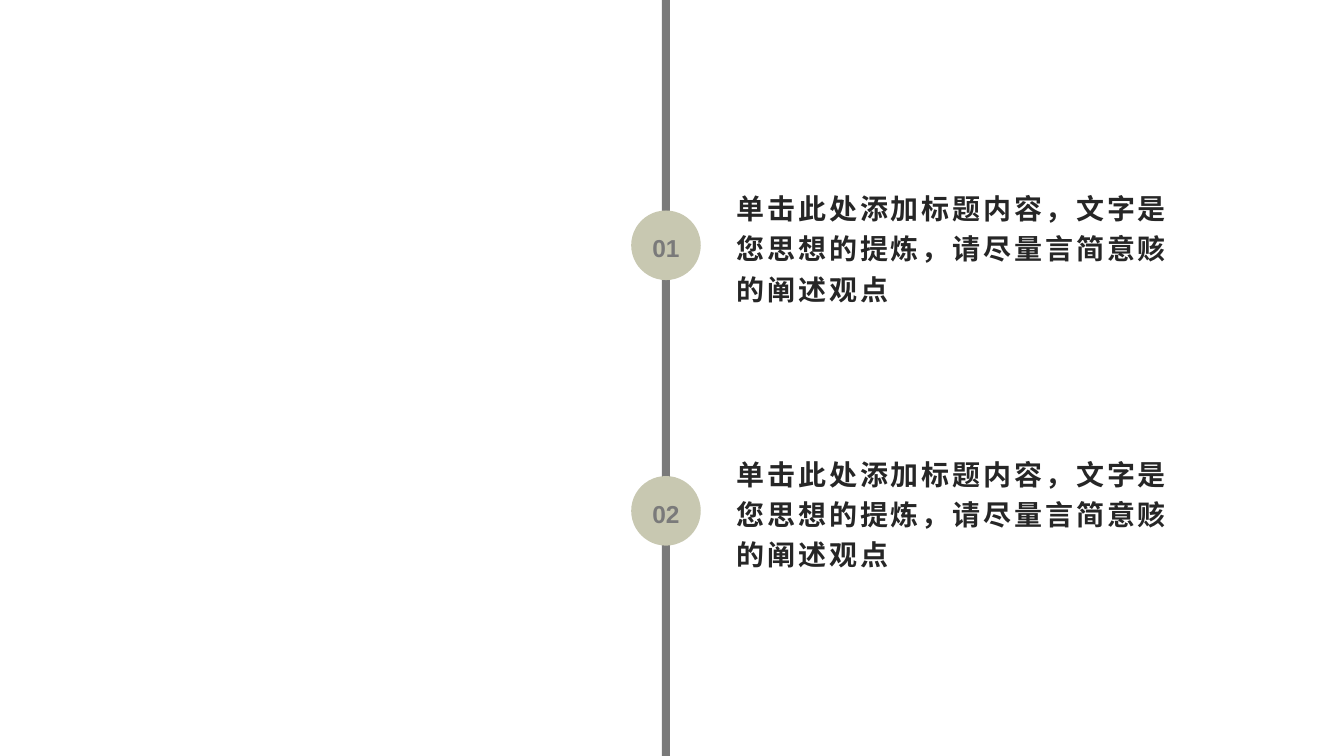
from pptx import Presentation
from pptx.dml.color import RGBColor
from pptx.enum.shapes import MSO_SHAPE
from pptx.enum.text import MSO_ANCHOR, PP_ALIGN
from pptx.util import Pt

RECT, OVAL = MSO_SHAPE.RECTANGLE, MSO_SHAPE.OVAL
MIDDLE = MSO_ANCHOR.MIDDLE
LEFT, CENTER = PP_ALIGN.LEFT, PP_ALIGN.CENTER

GRAY = RGBColor(0x7A, 0x7A, 0x7A)
SAGE = RGBColor(0xC8, 0xC8, 0xB1)
INK = RGBColor(0x26, 0x26, 0x26)

SLIDE_W, SLIDE_H = 960, 540
AXIS_X = 475.7
BAR_W = 5.8
DOT = 49.7
TEXT_X, TEXT_W, TEXT_H = 519.1, 329.8, 138.2
FIRST_Y, STEP_Y = 175.2, 189.7

ITEMS = [
    "单击此处添加标题内容，文字是您思想的提炼，请尽量言简意赅的阐述观点",
    "单击此处添加标题内容，文字是您思想的提炼，请尽量言简意赅的阐述观点",
]


class Timeline:
    """Holds the text style and the current slide."""

    font = "Arial"
    line_spacing = 1.2

    def __init__(self, slide):
        self.shapes = slide.shapes

    def shape(self, kind, x, y, w, h, color):
        sp = self.shapes.add_shape(kind, Pt(x), Pt(y), Pt(w), Pt(h))
        sp.shadow.inherit = False
        sp.fill.solid()
        sp.fill.fore_color.rgb = color
        sp.line.fill.background()
        return sp

    def set_text(self, sp, text, size, color, align, spacing=0):
        tf = sp.text_frame
        tf.word_wrap = True
        tf.vertical_anchor = MIDDLE
        p = tf.paragraphs[0]
        p.text = text
        p.alignment = align
        p.line_spacing = self.line_spacing
        r = p.runs[0]
        r.font.name = self.font
        r.font.size = Pt(size)
        r.font.bold = True
        r.font.color.rgb = color
        if spacing:
            # Letter spacing is stored in hundredths of a point
            r._r.get_or_add_rPr().set("spc", str(spacing * 100))

    def bar(self):
        self.shape(RECT, AXIS_X - BAR_W / 2, 0, BAR_W, SLIDE_H, GRAY)

    def dot(self, y, label):
        sp = self.shape(OVAL, AXIS_X - DOT / 2, y - DOT / 2, DOT, DOT, SAGE)
        self.set_text(sp, label, 17.5, GRAY, CENTER)

    def caption(self, y, text):
        sp = self.shapes.add_textbox(
            Pt(TEXT_X), Pt(y - TEXT_H / 2), Pt(TEXT_W), Pt(TEXT_H))
        self.set_text(sp, text, 20, INK, LEFT, spacing=2)


def main():
    prs = Presentation()
    prs.slide_width, prs.slide_height = Pt(SLIDE_W), Pt(SLIDE_H)
    timeline = Timeline(prs.slides.add_slide(prs.slide_layouts[6]))

    # Vertical axis
    timeline.bar()

    # Numbered entries
    for i, text in enumerate(ITEMS):
        y = FIRST_Y + i * STEP_Y
        timeline.dot(y, f"{i + 1:02d}")
        timeline.caption(y, text)

    prs.save("out.pptx")


if __name__ == "__main__":
    main()
